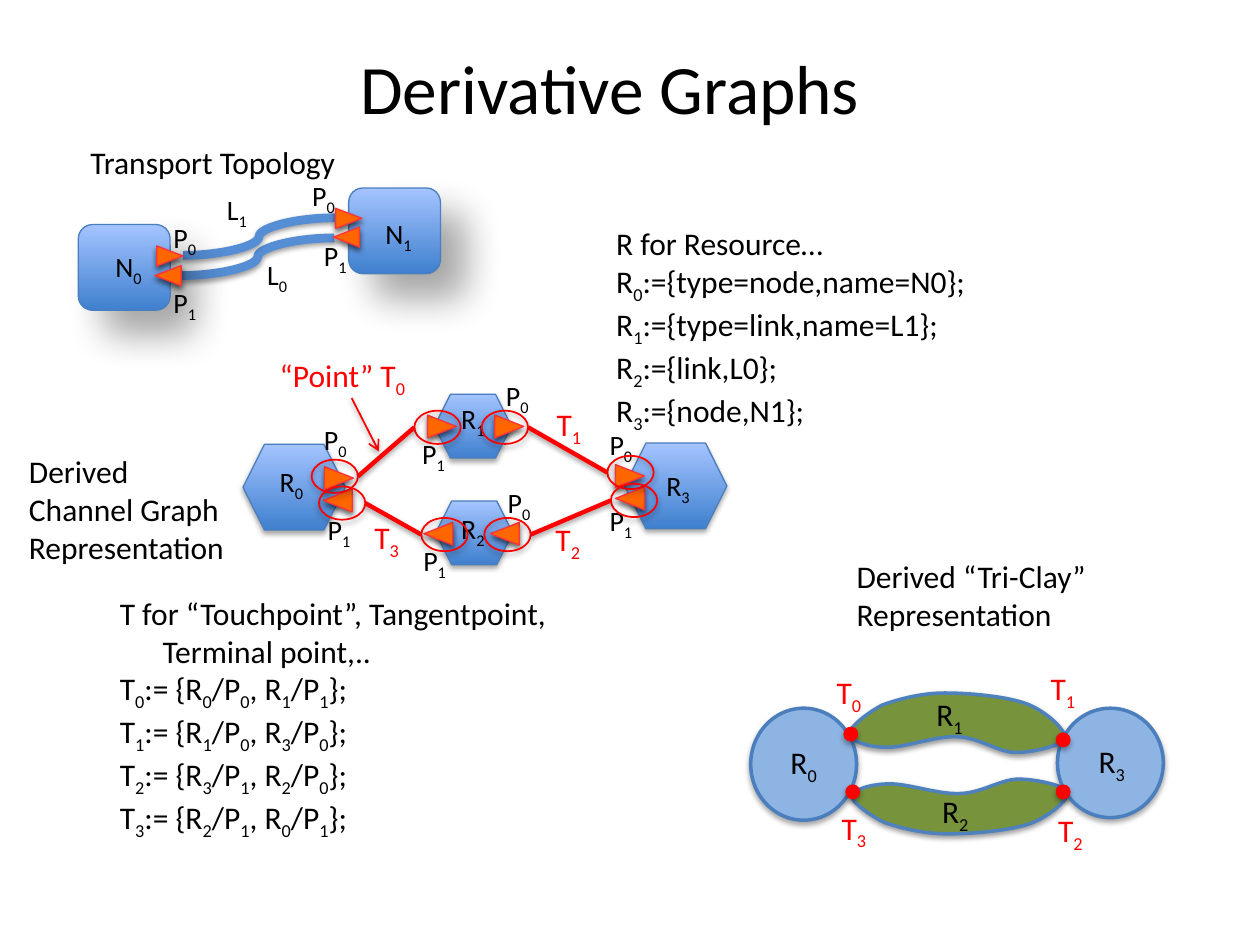
from dataclasses import dataclass
from typing import NamedTuple

from lxml.etree import SubElement
from pptx import Presentation
from pptx.dml.color import RGBColor
from pptx.enum.shapes import MSO_CONNECTOR as Link, MSO_SHAPE as Kind
from pptx.enum.text import MSO_ANCHOR as Anchor, MSO_AUTO_SIZE as Auto, PP_ALIGN as Align
from pptx.oxml.ns import qn
from pptx.util import Pt


class Shade(NamedTuple):
    alpha: int
    blur: float
    dist: float
    angle: int


@dataclass(frozen=True)
class Theme:
    font: str = "Calibri"
    black: str = "000000"
    red: str = "FF0000"
    edge: str = "4B7EBC"
    rim: str = "4F81BD"
    wire: str = "558ED5"
    disc: str = "8EB4E3"
    lobe: str = "77933C"
    port: str = "FF6600"
    brink: str = "FF323B"
    blend: tuple = ("3F80CE", "A4C4FF")
    head: float = 39.6
    body: float = 18
    small: float = 16
    soft: Shade = Shade(35, 3.1, 1.8, 90)
    thin: Shade = Shade(38, 3.1, 1.6, 90)
    hard: Shade = Shade(60, 3.2, 2, 90)
    far: Shade = Shade(35, 21.8, 20, 45)


class Box(NamedTuple):
    x: float
    y: float
    w: float
    h: float


class Tag(NamedTuple):
    text: str
    x: float
    y: float
    w: float = 29.5


class Port(NamedTuple):
    x: float
    y: float
    turn: int


T = Theme()
RIGHT, LEFT = 90, 270
RING_W, RING_H, DOT = 26.5, 19, 6.5


def mid(x: float, y: float, w: float, h: float) -> Box:
    return Box(x - w / 2, y - h / 2, w, h)


def rgb(code: str) -> RGBColor:
    return RGBColor.from_string(code)


def cast(item, shade: Shade) -> None:
    """Give a shape or connector an outer shadow."""
    props = item._element.spPr
    group = props.find(qn("a:effectLst"))
    if group is None:
        group = SubElement(props, qn("a:effectLst"))
    drop = SubElement(group, qn("a:outerShdw"), blurRad=str(Pt(shade.blur)),
                      dist=str(Pt(shade.dist)), dir=str(shade.angle * 60000), rotWithShape="0")
    tone = SubElement(drop, qn("a:srgbClr"), val=T.black)
    SubElement(tone, qn("a:alpha"), val=str(shade.alpha * 1000))


def paint(item, fill, edge: str, width: float, shade: Shade) -> None:
    item.shadow.inherit = False
    if fill is None:
        item.fill.background()
    elif isinstance(fill, tuple):
        item.fill.gradient()
        item.fill.gradient_angle = 90
        for stop, code in zip(item.fill.gradient_stops, fill):
            stop.color.rgb = rgb(code)
    else:
        item.fill.solid()
        item.fill.fore_color.rgb = rgb(fill)
    item.line.color.rgb = rgb(edge)
    item.line.width = Pt(width)
    cast(item, shade)


def form(page, kind, box: Box, fill, edge: str, width: float, shade: Shade = T.soft):
    item = page.shapes.add_shape(kind, *map(Pt, box))
    paint(item, fill, edge, width, shade)
    return item


def ports(page, items: list[Port], w: float, h: float) -> None:
    for port in items:
        item = form(page, Kind.ISOSCELES_TRIANGLE, mid(port.x, port.y, w, h),
                    T.port, T.brink, 0.75, T.hard)
        item.rotation = port.turn


def join(page, kind, ends: tuple, tone: str, width: float):
    item = page.shapes.add_connector(kind, *map(Pt, ends))
    item.line.color.rgb = rgb(tone)
    item.line.width = Pt(width)
    cast(item, T.thin)
    return item


def write(para, text: str, size: float, tone: str) -> None:
    """Add runs; the digit after each underscore is a subscript."""
    first, *rest = text.split("_")
    parts = [(first, False)]
    for piece in rest:
        parts += [(piece[0], True), (piece[1:], False)]
    for words, low in parts:
        if not words:
            continue
        run = para.add_run()
        run.text = words
        for key, value in {"name": T.font, "size": Pt(size)}.items():
            setattr(run.font, key, value)
        run.font.color.rgb = rgb(tone)
        if low:
            run.font._element.set("baseline", "-25000")


def label(page, tag: Tag, size: float = T.body, tone: str = T.black, wrap: bool = False):
    lines = tag.text.split("\n")
    high = 7.2 + len(lines) * size * 1.22
    frame = page.shapes.add_textbox(*map(Pt, (tag.x, tag.y, tag.w, high))).text_frame
    for key, value in {"word_wrap": wrap, "auto_size": Auto.SHAPE_TO_FIT_TEXT}.items():
        setattr(frame, key, value)
    for i, line in enumerate(lines):
        para = frame.add_paragraph() if i else frame.paragraphs[0]
        write(para, line, size, tone)
    return frame


def lobe(page, x: float, y: float, rise: float) -> None:
    """Outline a closed ring of cubic curves; a negative rise mirrors it."""
    dots = [(102, 6.5), (90.5, 2), (69, 0), (54.5, 0), (41, 0), (28, 3.5), (18.5, 7),
            (10, 11.5), (0, 19.5), (0, 23), (0, 27.5), (11, 31), (21, 31),
            (31, 31.5), (49, 24.5), (61, 25), (73.5, 25), (85, 34), (95, 34),
            (105, 34), (121.5, 30), (123, 26), (124, 21.5), (113, 11), (102, 6.5)]
    spots = [(Pt(x + u), Pt(y + rise * v)) for u, v in dots]
    build = page.shapes.build_freeform(*spots[0])
    build.add_line_segments(spots[1:], close=True)
    item = build.convert_to_shape()
    # Every three segments become the control points of one curve
    steps = list(item._element.iter(qn("a:lnTo")))
    for i in range(0, len(dots) - 1, 3):
        curve = steps[i].makeelement(qn("a:cubicBezTo"))
        steps[i].addprevious(curve)
        for step in steps[i:i + 3]:
            curve.append(step[0])
            step.getparent().remove(step)
    paint(item, T.lobe, T.rim, 2, T.thin)


def transport(page) -> None:
    for ends in [(103.5, 157.5, 191, 136), (104.5, 146, 191.5, 124.5)]:
        join(page, Link.CURVE, ends, T.wire, 5)
    for x, y in [(44.75, 128.3), (199.25, 107.4)]:
        form(page, Kind.ROUNDED_RECTANGLE, Box(x, y, 52.5, 49), T.blend, T.edge, 0.75, T.far)
    ports(page, [Port(97, 146.3, RIGHT), Port(96, 157.5, LEFT),
                 Port(199.3, 124.8, RIGHT), Port(198, 135.5, LEFT)], 11.5, 15)
    for tag in [Tag("P_0", 92, 122.5, 45), Tag("P_1", 92, 159.8, 45), Tag("N_0", 58.8, 139, 38),
                Tag("P_0", 171.3, 98.5, 35), Tag("P_1", 178, 133, 35), Tag("L_1", 122.5, 106.5, 35),
                Tag("L_0", 145.5, 143.5), Tag("N_1", 213.2, 120, 38)]:
        label(page, tag, T.small, wrap=True)


def channel(page) -> None:
    for box in [Box(138.9, 253.9, 58.5, 49), Box(248.3, 225.3, 44, 36.5),
                Box(249, 286.3, 44, 36.5), Box(356.9, 253.2, 58.5, 49)]:
        form(page, Kind.HEXAGON, box, T.blend, T.edge, 0.75)
    for tag in [Tag("P_0", 178, 237.8), Tag("P_1", 180.2, 289.5), Tag("R_0", 152.7, 262, 33),
                Tag("P_0", 282, 213), Tag("P_1", 234.2, 245.7), Tag("R_1", 256.5, 226, 33),
                Tag("P_0", 283, 273.8), Tag("P_1", 234.8, 306.8), Tag("R_2", 256.5, 288.5, 33),
                Tag("P_0", 341.2, 240.5), Tag("P_1", 341.2, 284.3), Tag("R_3", 373.7, 264, 33)]:
        label(page, tag, T.small, wrap=True)
    ports(page, [Port(193.7, 273.2, RIGHT), Port(193, 286, LEFT), Port(252.5, 243.7, RIGHT),
                 Port(291, 243.7, RIGHT), Port(250.5, 305, LEFT), Port(288.5, 305, LEFT),
                 Port(360, 272, RIGHT), Port(360, 284.8, LEFT)], 13, 16.5)
    # Each touchpoint: a left ring, a right ring and the line between them
    for (ax, ay), (bx, by) in [((191.3, 272.2), (250, 244.2)), ((288.5, 244.2), (360.3, 270)),
                               ((290, 305.5), (362.3, 286)), ((195.5, 287.5), (254, 305.5))]:
        for x, y in [(ax, ay), (bx, by)]:
            form(page, Kind.OVAL, mid(x, y, RING_W, RING_H), None, T.red, 1)
        join(page, Link.STRAIGHT, (bx - RING_W / 2, by, ax + RING_W / 2, ay), T.red, 2.5)
    arrow = join(page, Link.STRAIGHT, (201, 227.5, 216.5, 258), T.red, 1)
    SubElement(arrow.line._get_or_add_ln(), qn("a:tailEnd"), type="arrow")
    for tag in [Tag("“Point” T_0", 152.8, 199.8, 88), Tag("T_1", 311, 227.8),
                Tag("T_2", 310.3, 293.8), Tag("T_3", 206.8, 292.5)]:
        label(page, tag, tone=T.red)


def dough(page) -> None:
    lobe(page, 485.5, 396, 1)
    lobe(page, 487, 476.5, -0.92)
    form(page, Kind.OVAL, Box(604.3, 404.7, 60.5, 62.5), T.disc, T.edge, 2)
    disc = form(page, Kind.OVAL, Box(429, 404.7, 60.5, 64), T.disc, T.edge, 2)
    disc.text_frame.vertical_anchor = Anchor.MIDDLE
    para = disc.text_frame.paragraphs[0]
    para.alignment = Align.CENTER
    write(para, "R_0", T.body, T.black)
    for x, y in [(607.5, 452.5), (607.5, 422.8), (486.2, 419.5), (487.3, 452.5)]:
        form(page, Kind.OVAL, mid(x, y, DOT, DOT), T.red, T.red, 2)
    for tag in [Tag("R_1", 528, 393.7, 31), Tag("R_2", 531.3, 449.2, 31),
                Tag("R_3", 620.7, 420.5, 31)]:
        label(page, tag)
    for tag in [Tag("T_0", 471, 381), Tag("T_1", 593.3, 378.7),
                Tag("T_2", 597.5, 460), Tag("T_3", 473.8, 458.5)]:
        label(page, tag, tone=T.red)


def main() -> None:
    deck = Presentation()
    deck.slide_width, deck.slide_height = Pt(720), Pt(540)
    page = deck.slides.add_slide(deck.slide_layouts[5])

    # Title
    title = page.shapes.title
    for key, value in zip(("left", "top", "width", "height"), (24.5, 20.3, 648, 58.5)):
        setattr(title, key, Pt(value))
    title.text_frame.vertical_anchor = Anchor.MIDDLE
    para = title.text_frame.paragraphs[0]
    para.alignment = Align.CENTER
    write(para, "Derivative Graphs", T.head, T.black)

    # Diagrams
    transport(page)
    channel(page)
    dough(page)

    # Captions and definitions
    for tag in [Tag("Transport Topology", 44.6, 78.2, 156),
                Tag("Derived\nChannel Graph\nRepresentation", 9.5, 255, 127),
                Tag("Derived “Tri-Clay”\nRepresentation", 482.4, 314.6, 156),
                Tag("R for Resource…\nR_0:={type=node,name=N0};\nR_1:={type=link,name=L1};\n"
                    "R_2:={link,L0};\nR_3:={node,N1};", 345, 124.5, 217)]:
        label(page, tag)
    notes = label(page, Tag("T for “Touchpoint”, Tangentpoint,\nTerminal point,..\n"
                            "T_0:= {R_0/P_0, R_1/P_1};\nT_1:= {R_1/P_0, R_3/P_0};\n"
                            "T_2:= {R_3/P_1, R_2/P_0};\nT_3:= {R_2/P_1, R_0/P_1};",
                            61.4, 335.8, 260.5))
    notes.paragraphs[1]._p.get_or_add_pPr().set("marL", str(Pt(24.5)))
    deck.save("out.pptx")


if __name__ == "__main__":
    main()
